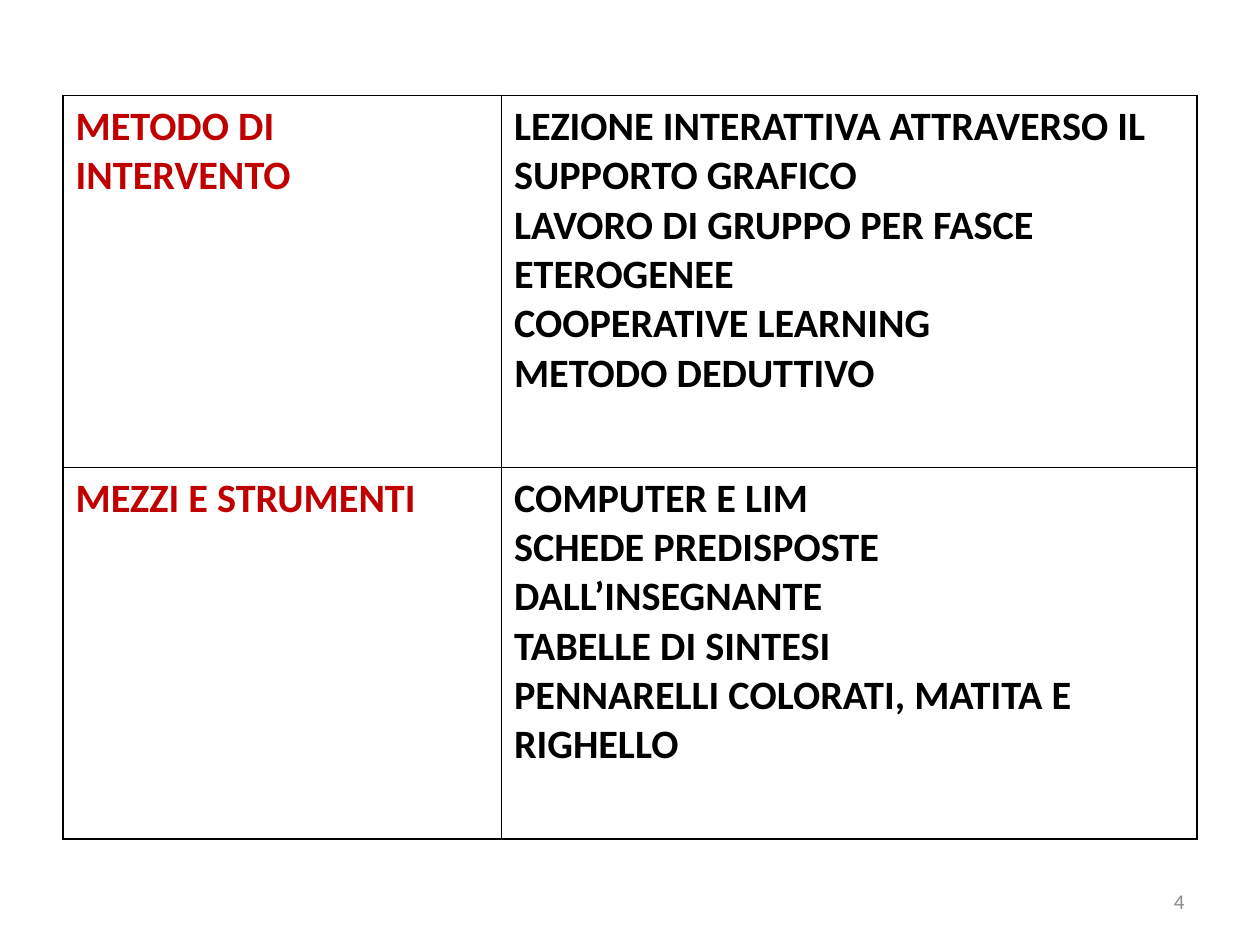
import pptx
import pptx.dml.color
import pptx.enum.text
import pptx.oxml.ns
import pptx.util
from lxml import etree
from pptx.util import Inches

RED = pptx.dml.color.RGBColor(0xC0, 0x00, 0x00)
BLACK = pptx.dml.color.RGBColor(0x00, 0x00, 0x00)
GREY = pptx.dml.color.RGBColor(0x8C, 0x8C, 0x8C)

ROWS = [
    (
        "METODO DI INTERVENTO",
        "LEZIONE INTERATTIVA ATTRAVERSO IL SUPPORTO GRAFICO\n"
        "LAVORO DI GRUPPO PER FASCE ETEROGENEE\n"
        "COOPERATIVE LEARNING\n"
        "METODO DEDUTTIVO",
    ),
    (
        "MEZZI E STRUMENTI",
        "COMPUTER E LIM\n"
        "SCHEDE PREDISPOSTE DALL’INSEGNANTE\n"
        "TABELLE DI SINTESI\n"
        "PENNARELLI COLORATI, MATITA E RIGHELLO",
    ),
]


def format_text(text_frame, size, color, bold=False):
    for paragraph in text_frame.paragraphs:
        for run in paragraph.runs:
            run.font.name = "Calibri"
            run.font.size = pptx.util.Pt(size)
            run.font.bold = bold
            run.font.color.rgb = color


def add_borders(cell):
    """Draw a thin black line on all four sides of the cell."""
    properties = cell._tc.get_or_add_tcPr()
    qn = pptx.oxml.ns.qn
    for position, side in enumerate(("a:lnL", "a:lnR", "a:lnT", "a:lnB")):
        line = etree.Element(qn(side), w=str(pptx.util.Pt(1)))
        fill = etree.SubElement(line, qn("a:solidFill"))
        etree.SubElement(fill, qn("a:srgbClr"), val=str(BLACK))
        properties.insert(position, line)


presentation = pptx.Presentation()
presentation.slide_width = Inches(10)
presentation.slide_height = Inches(7.5)
slide = presentation.slides.add_slide(presentation.slide_layouts[6])

plan = slide.shapes.add_table(
    len(ROWS), 2, Inches(0.5), Inches(0.76), Inches(9), Inches(5.9)
).table
plan.first_row = False
plan.horz_banding = False
for column, width in zip(plan.columns, (3.48, 5.52)):
    column.width = Inches(width)

for row_index, row_texts in enumerate(ROWS):
    plan.rows[row_index].height = Inches(2.95)
    for column_index, (text, color) in enumerate(zip(row_texts, (RED, BLACK))):
        cell = plan.cell(row_index, column_index)
        cell.fill.background()
        add_borders(cell)
        cell.text_frame.text = text
        format_text(cell.text_frame, 23, color, bold=True)

page_number = slide.shapes.add_textbox(
    Inches(7.17), Inches(6.95), Inches(2.33), Inches(0.4)
).text_frame
page_number.word_wrap = True
page_number.vertical_anchor = pptx.enum.text.MSO_ANCHOR.MIDDLE
page_number.text = "4"
page_number.paragraphs[0].alignment = pptx.enum.text.PP_ALIGN.RIGHT
format_text(page_number, 12, GREY)

presentation.save("out.pptx")
